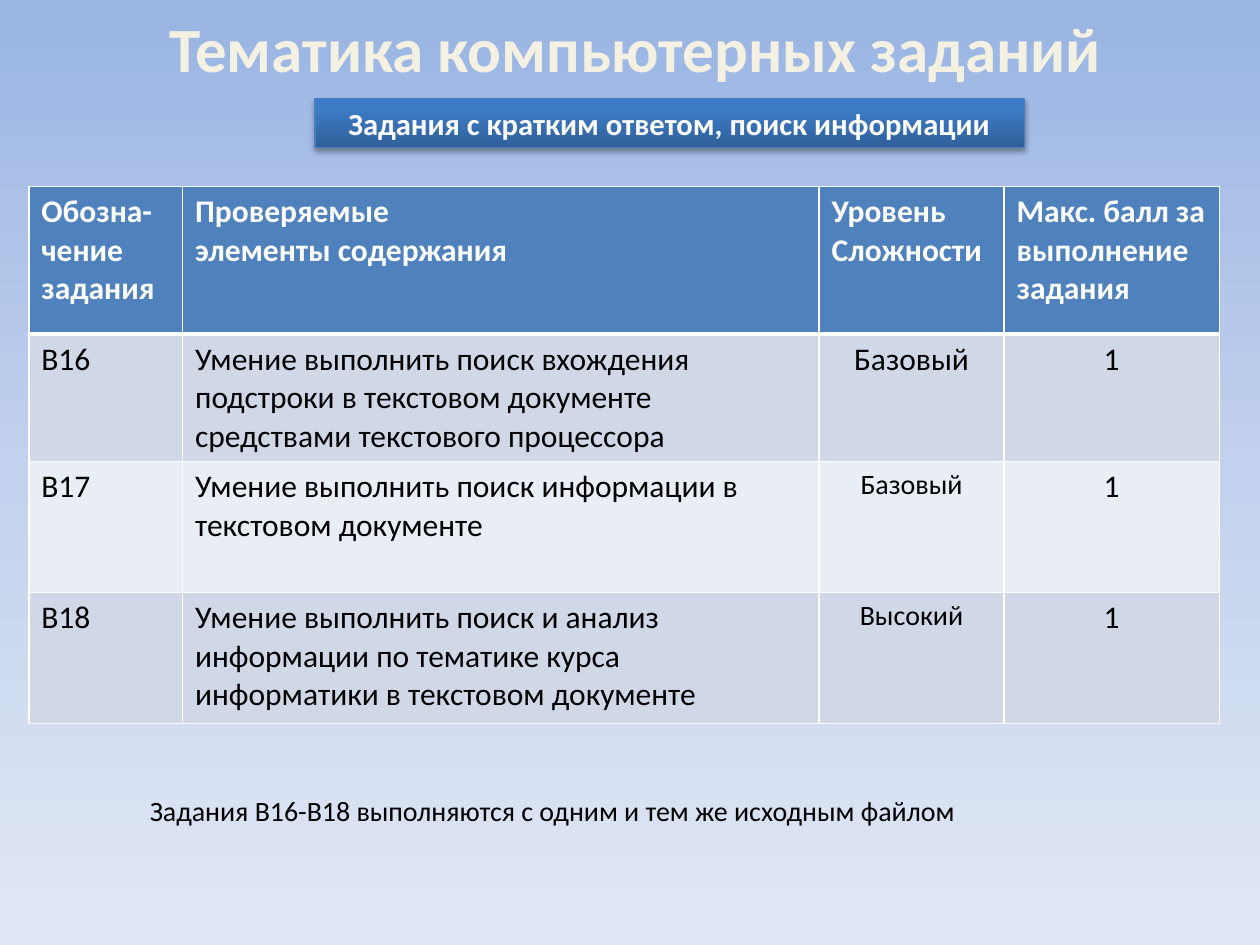
from dataclasses import dataclass

from lxml import etree
from pptx import Presentation
from pptx.dml.color import RGBColor
from pptx.enum.shapes import MSO_SHAPE
from pptx.enum.text import MSO_ANCHOR, MSO_AUTO_SIZE, PP_ALIGN
from pptx.oxml import parse_xml
from pptx.oxml.ns import nsdecls, qn
from pptx.util import Cm, Pt

RECT = MSO_SHAPE.RECTANGLE
MIDDLE = MSO_ANCHOR.MIDDLE
FIT = MSO_AUTO_SIZE.SHAPE_TO_FIT_TEXT
LEFT, CENTER = PP_ALIGN.LEFT, PP_ALIGN.CENTER


@dataclass(frozen=True)
class Theme:
    font: str = "Calibri"
    title: str = "F4F1E3"
    edge: str = "054697"
    white: str = "FFFFFF"
    black: str = "000000"
    head: str = "4F81BD"
    bands: tuple = ("D0D8E8", "E9EDF4")
    line: str = "4B7EBC"
    sky: tuple = ((0, "9AB5E4"), (50, "C2D1ED"), (100, "E1E8F5"))
    bar: tuple = ((0, "2F5F99"), (80, "3D7CC7"), (100, "3A7CCB"))
    title_size: float = 36
    bar_size: float = 17.5
    cell_size: float = 18
    small_size: float = 16


@dataclass(frozen=True)
class Task:
    code: str
    skill: str
    level: str
    level_size: float
    score: str = "1"


THEME = Theme()
HEADS = (
    "Обозна-чение\nзадания",
    "Проверяемые\nэлементы содержания",
    "Уровень\nСложности",
    "Макс. балл за выполнение задания",
)
TASKS = (
    Task("B16", "Умение выполнить поиск вхождения подстроки в текстовом "
         "документе средствами текстового процессора", "Базовый", THEME.cell_size),
    Task("B17", "Умение выполнить поиск информации в текстовом документе",
         "Базовый", THEME.small_size),
    Task("B18", "Умение выполнить поиск и анализ информации по тематике курса "
         "информатики в текстовом документе", "Высокий", THEME.small_size),
)
WIDTHS = (3.1, 12.83, 3.73, 4.34)
HEIGHTS = (2.97, 2.57, 2.64, 2.64)


def write(frame, text: str, size: float, color: str,
          bold: bool = False, align=LEFT) -> None:
    frame.text = text
    for para in frame.paragraphs:
        para.alignment = align
        font = para.font
        font.name, font.size, font.bold = THEME.font, Pt(size), bold
        font.color.rgb = RGBColor.from_string(color)


def blend(fill, stops: tuple, angle: int) -> None:
    """Fill with percent and colour stops; the angle runs clockwise."""
    fill.gradient()
    fill.gradient_angle = 360 - angle
    grad = fill._fill._gradFill
    items = grad.find(qn("a:gsLst"))
    for old in list(items):
        items.remove(old)
    for spot, color in stops:
        stop = etree.SubElement(items, qn("a:gs"), pos=str(spot * 1000))
        etree.SubElement(stop, qn("a:srgbClr"), val=color)


def outline(tag: str, color: str, width: float):
    return parse_xml(
        f'<a:{tag} {nsdecls("a")} w="{Pt(width)}"><a:solidFill>'
        f'<a:srgbClr val="{color}"/></a:solidFill></a:{tag}>')


def add_title(slide) -> None:
    box = slide.shapes.title
    box.left, box.top, box.width, box.height = Cm(1), Cm(0.4), Cm(23.62), Cm(1.48)
    frame = box.text_frame
    write(frame, "Тематика компьютерных заданий", THEME.title_size,
          THEME.title, True, CENTER)
    frame.auto_size = FIT
    para = frame.paragraphs[0]
    para.line_spacing = Pt(33.2)
    para.runs[0]._r.get_or_add_rPr().insert(0, outline("ln", THEME.edge, 1))


def add_bar(slide) -> None:
    bar = slide.shapes.add_shape(RECT, Cm(6.35), Cm(1.98), Cm(14.3), Cm(1))
    blend(bar.fill, THEME.bar, 270)
    bar.line.color.rgb = RGBColor.from_string(THEME.line)
    bar.line.width = Pt(0.75)
    bar._element.spPr.append(parse_xml(
        f'<a:effectLst {nsdecls("a")}><a:outerShdw blurRad="{Pt(3.1)}" '
        f'dist="{Pt(1.8)}" dir="5400000" rotWithShape="0">'
        f'<a:srgbClr val="{THEME.black}"><a:alpha val="35000"/></a:srgbClr>'
        '</a:outerShdw></a:effectLst>'))
    frame = bar.text_frame
    frame.word_wrap = True
    frame.vertical_anchor = MIDDLE
    write(frame, "Задания с кратким ответом, поиск информации",
          THEME.bar_size, THEME.white, True, CENTER)


def style(cell, fill: str, top: float = 1, bottom: float = 1) -> None:
    props = cell._tc.get_or_add_tcPr()
    for tag, width in (("lnL", 1), ("lnR", 1), ("lnT", top), ("lnB", bottom)):
        props.append(outline(tag, THEME.white, width))
    cell.fill.solid()
    cell.fill.fore_color.rgb = RGBColor.from_string(fill)


def add_grid(slide) -> None:
    grid = slide.shapes.add_table(
        len(HEIGHTS), len(WIDTHS), Cm(0.58), Cm(3.76),
        Cm(sum(WIDTHS)), Cm(sum(HEIGHTS))).table
    for col, width in zip(grid.columns, WIDTHS):
        col.width = Cm(width)
    for row, height in zip(grid.rows, HEIGHTS):
        row.height = Cm(height)
    for col, text in enumerate(HEADS):
        cell = grid.cell(0, col)
        write(cell.text_frame, text, THEME.cell_size, THEME.white, True)
        style(cell, THEME.head, bottom=3)
    for row, task in enumerate(TASKS, 1):
        parts = (
            (task.code, THEME.cell_size, LEFT),
            (task.skill, THEME.cell_size, LEFT),
            (task.level, task.level_size, CENTER),
            (task.score, THEME.cell_size, CENTER),
        )
        for col, (text, size, align) in enumerate(parts):
            cell = grid.cell(row, col)
            write(cell.text_frame, text, size, THEME.black, align=align)
            style(cell, THEME.bands[(row - 1) % 2], top=3 if row == 1 else 1)


def add_note(slide) -> None:
    box = slide.shapes.add_textbox(Cm(2.77), Cm(15.88), Cm(16.97), Cm(0.94))
    frame = box.text_frame
    frame.word_wrap = False
    frame.auto_size = FIT
    write(frame, "Задания B16-B18 выполняются с одним и тем же исходным файлом",
          THEME.small_size, THEME.black)


def main() -> None:
    deck = Presentation()
    deck.slide_width, deck.slide_height = Cm(25.4), Cm(19.05)
    slide = deck.slides.add_slide(deck.slide_layouts[5])
    blend(slide.background.fill, THEME.sky, 90)
    add_title(slide)
    add_grid(slide)
    add_bar(slide)
    add_note(slide)
    deck.save("out.pptx")


if __name__ == "__main__":
    main()
